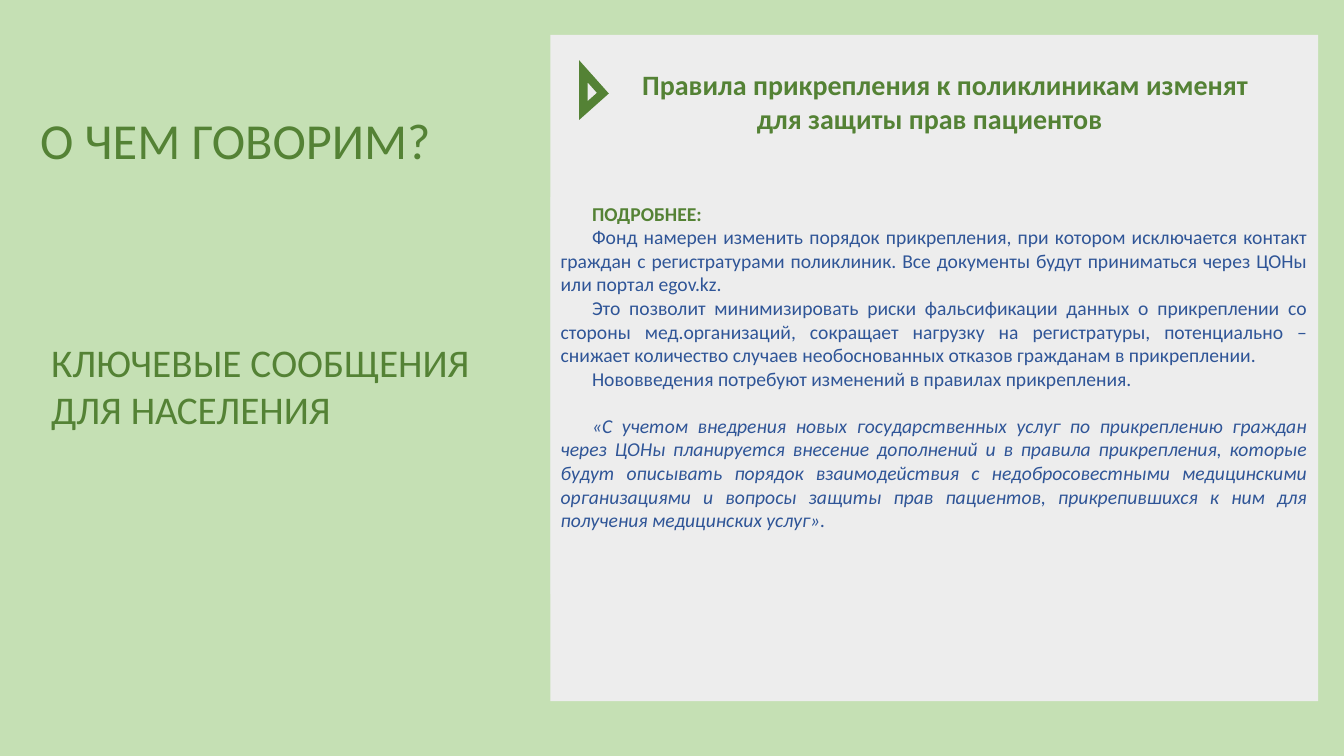
"""Build the slide on key messages about changes to clinic registration."""
from lxml import etree
from pptx import Presentation
from pptx import util as u
from pptx.dml.color import RGBColor
from pptx.enum import shapes, text
from pptx.oxml.ns import qn

GREEN, BLUE, PANEL, BACKGROUND = "548235", "2F5597", "EDEDED", "C5E0B4"
INDENT = u.Cm(0.79)


def colour(value):
    return RGBColor.from_string(value)


def write(shape, paragraphs, alignment, indent, font_format):
    frame = shape.text_frame
    frame.word_wrap = True
    frame.vertical_anchor = text.MSO_ANCHOR.TOP
    for index, (wording, own_format) in enumerate(paragraphs):
        paragraph = frame.add_paragraph() if index else frame.paragraphs[0]
        paragraph.alignment = alignment
        paragraph._p.get_or_add_pPr().set("indent", str(indent))
        run = paragraph.add_run()
        run.text = wording
        for name, value in {"name": "Calibri", **font_format, **own_format}.items():
            if name == "color":
                run.font.color.rgb = colour(value)
            else:
                setattr(run.font, name, value)


presentation = Presentation()
presentation.slide_width, presentation.slide_height = u.Cm(33.87), u.Cm(19.05)
slide = presentation.slides.add_slide(presentation.slide_layouts[6])
slide.background.fill.solid()
slide.background.fill.fore_color.rgb = colour(BACKGROUND)

boxes = {}
for name, kind, left, top, width, height in [
    ("subheading", None, 1.04, 8.41, 11.71, 2.64),
    ("panel", shapes.MSO_SHAPE.RECTANGLE, 13.87, 0.88, 19.35, 16.79),
    ("heading", None, 0.76, 2.62, 12.45, 2.57),
    ("message", None, 14.63, 1.58, 17.6, 2.64),
    ("marker", shapes.MSO_SHAPE.RIGHT_TRIANGLE, 14.33, 1.96, 0.74, 0.66),
    ("details", shapes.MSO_SHAPE.RECTANGLE, 13.88, 4.96, 19.33, 10.01),
]:
    place = [u.Cm(length) for length in (left, top, width, height)]
    if kind is None:
        shape = slide.shapes.add_textbox(*place)
    else:
        shape = slide.shapes.add_shape(kind, *place)
        shape.shadow.inherit = False
        shape.fill.solid()
        shape.fill.fore_color.rgb = colour(PANEL)
        shape.line.fill.background()
    boxes[name] = shape

marker = boxes["marker"]
marker.rotation = 228.3
marker.fill.background()
marker.line.color.rgb = colour(GREEN)
marker.line.width = u.Pt(6)
etree.SubElement(marker.line._get_or_add_ln(), qn("a:miter")).set("lim", "800000")

write(boxes["heading"], [("О ЧЕМ ГОВОРИМ?", {})],
      text.PP_ALIGN.LEFT, 0, {"size": u.Pt(36), "color": GREEN})
write(boxes["subheading"], [("КЛЮЧЕВЫЕ СООБЩЕНИЯ", {}), ("ДЛЯ НАСЕЛЕНИЯ", {})],
      text.PP_ALIGN.LEFT, 0, {"size": u.Pt(28), "color": GREEN})
write(boxes["message"],
      [("Правила прикрепления к поликлиникам изменят для защиты прав пациентов", {})],
      text.PP_ALIGN.CENTER, INDENT, {"size": u.Pt(20), "color": GREEN, "bold": True})
write(boxes["details"], [
    ("ПОДРОБНЕЕ:", {"color": GREEN, "bold": True}),
    ("Фонд намерен изменить порядок прикрепления, при котором исключается контакт "
     "граждан с регистратурами поликлиник. Все документы будут приниматься через ЦОНы "
     "или портал egov.kz.", {}),
    ("Это позволит минимизировать риски фальсификации данных о прикреплении со стороны "
     "мед.организаций, сокращает нагрузку на регистратуры, потенциально – снижает "
     "количество случаев необоснованных отказов гражданам в прикреплении.", {}),
    ("Нововведения потребуют изменений в правилах прикрепления.", {}),
    ("«С учетом внедрения новых государственных услуг по прикреплению граждан через ЦОНы "
     "планируется внесение дополнений и в правила прикрепления, которые будут описывать "
     "порядок взаимодействия с недобросовестными медицинскими организациями и вопросы "
     "защиты прав пациентов, прикрепившихся к ним для получения медицинских услуг».",
     {"italic": True}),
], text.PP_ALIGN.JUSTIFY, INDENT, {"size": u.Pt(14), "color": BLUE})
boxes["details"].text_frame.paragraphs[-1].space_before = u.Pt(17)

presentation.save("out.pptx")
